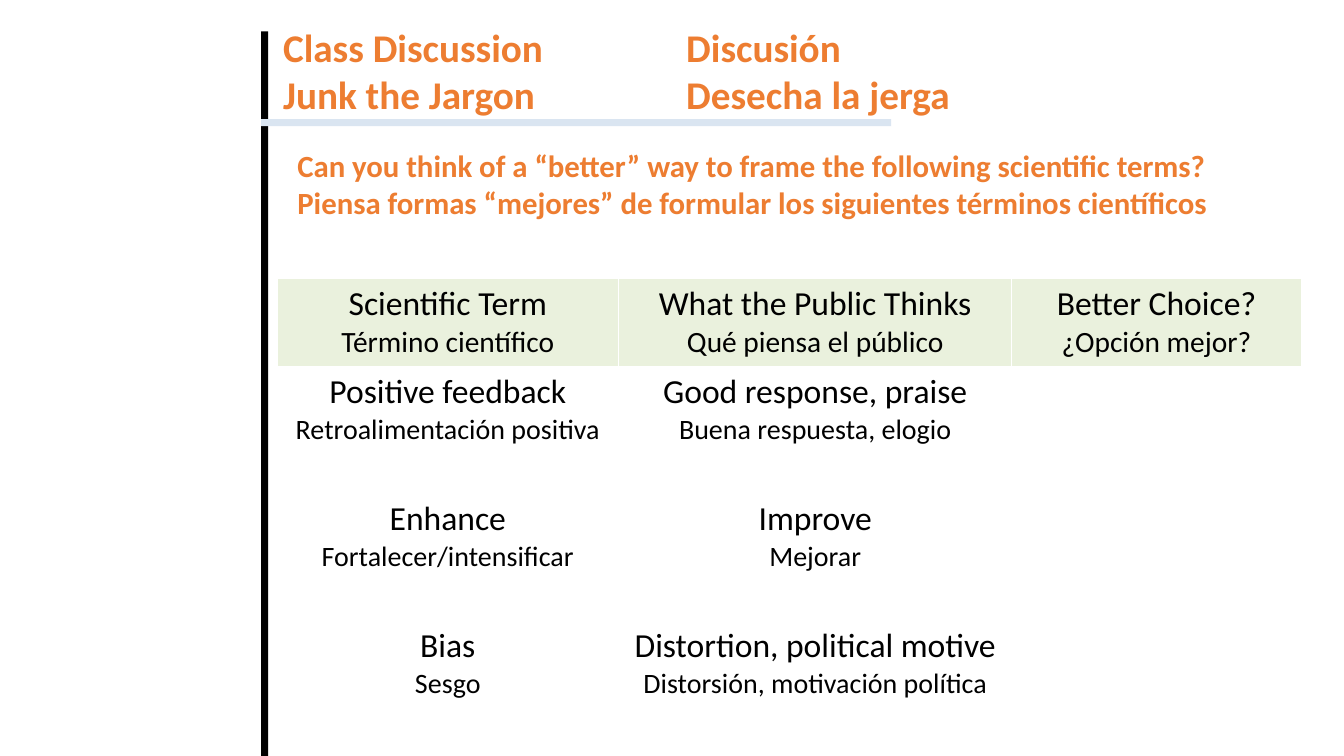
"""Build a bilingual slide on swapping scientific jargon for plain words."""
from dataclasses import dataclass

from lxml.etree import SubElement
from pptx import Presentation
from pptx.dml.color import RGBColor
from pptx.enum.shapes import MSO_SHAPE
from pptx.enum.text import MSO_ANCHOR, MSO_AUTO_SIZE, PP_ALIGN
from pptx.oxml.ns import qn
from pptx.util import Cm, Pt

HUES = {
    "accent": "ED7D31",
    "ink": "000000",
    "header": "EAF1DD",
    "rule": "DAE5F1",
    "border": "FFFFFF",
}
FONT = "Calibri"
TAB = Cm(2.54)


@dataclass
class Box:
    left: float
    top: float
    width: float
    height: float

    def sides(self) -> tuple:
        return Cm(self.left), Cm(self.top), Cm(self.width), Cm(self.height)


@dataclass
class Bar:
    box: Box
    hue: str


@dataclass
class Block:
    box: Box
    size: int
    lines: list


@dataclass
class Pair:
    english: str
    spanish: str


@dataclass
class Row:
    height: float
    small: int
    pairs: list


TITLE = Block(Box(6.88, 0.46, 21.89, 2.64), 28, [
    "Class Discussion\t\tDiscusión",
    "Junk the Jargon\t\tDesecha la jerga",
])
PROMPT = Block(Box(7.24, 3.58, 26.11, 2.64), 22, [
    "Can you think of a “better” way to frame the following scientific terms?",
    "Piensa formas “mejores” de formular los siguientes términos científicos",
])
BARS = [
    Bar(Box(6.58, 0.79, 0.18, 18.26), "ink"),
    Bar(Box(6.58, 3, 15.88, 0.18), "rule"),
]
WIDTHS = [8.61, 9.91, 7.29]
ROWS = [
    Row(2.21, 21, [
        Pair("Scientific Term", "Término científico"),
        Pair("What the Public Thinks", "Qué piensa el público"),
        Pair("Better Choice?", "¿Opción mejor?"),
    ]),
    Row(2.15, 20, [
        Pair("Positive feedback", "Retroalimentación positiva"),
        Pair("Good response, praise", "Buena respuesta, elogio"),
    ]),
    Row(3.2, 20, [
        Pair("Enhance", "Fortalecer/intensificar"),
        Pair("Improve", "Mejorar"),
    ]),
    Row(3.2, 20, [
        Pair("Bias", "Sesgo"),
        Pair("Distortion, political motive", "Distorsión, motivación política"),
    ]),
]


def tint(name: str) -> RGBColor:
    """Return a named colour."""
    return RGBColor.from_string(HUES[name])


def add_line(frame, order: int, text: str, size: int, hue: str, bold: bool):
    """Write one paragraph as a single run."""
    line = frame.paragraphs[0] if order == 0 else frame.add_paragraph()
    run = line.add_run()
    run.text = text
    run.font.name = FONT
    run.font.size = Pt(size)
    run.font.bold = bold
    run.font.color.rgb = tint(hue)
    return line


def fill_block(shape, block: Block) -> None:
    """Place a placeholder and set its plain left-aligned lines."""
    shape.left, shape.top, shape.width, shape.height = block.box.sides()
    frame = shape.text_frame
    frame.word_wrap = True
    frame.auto_size = MSO_AUTO_SIZE.NONE
    frame.vertical_anchor = MSO_ANCHOR.TOP
    for order, text in enumerate(block.lines):
        line = add_line(frame, order, text, block.size, "accent", True)
        line.alignment = PP_ALIGN.LEFT
        line.line_spacing = 1.0
        line.space_before = line.space_after = Pt(0)
        props = line._p.get_or_add_pPr()
        props.set("marL", "0")
        props.set("indent", "0")
        props.set("defTabSz", str(int(TAB)))
        SubElement(props, qn("a:buNone"))


def add_bar(slide, bar: Bar) -> None:
    """Draw a solid bar."""
    shape = slide.shapes.add_shape(MSO_SHAPE.RECTANGLE, *bar.box.sides())
    shape.shadow.inherit = False
    shape.fill.solid()
    shape.fill.fore_color.rgb = tint(bar.hue)
    shape.line.fill.background()


def edge_cell(cell) -> None:
    """Give a cell thin borders on all sides."""
    props = cell._tc.get_or_add_tcPr()
    for side in ("lnL", "lnR", "lnT", "lnB"):
        edge = SubElement(props, qn(f"a:{side}"), w=str(int(Pt(1))))
        solid = SubElement(edge, qn("a:solidFill"))
        SubElement(solid, qn("a:srgbClr"), val=HUES["border"])


def fill_cell(cell, pair: Pair, small: int) -> None:
    """Write an English line over its Spanish match."""
    sizes = ((pair.english, 24), (pair.spanish, small))
    for order, (text, size) in enumerate(sizes):
        line = add_line(cell.text_frame, order, text, size, "ink", False)
        line.alignment = PP_ALIGN.CENTER


def add_terms(slide) -> None:
    """Build the table of terms."""
    box = Box(6.98, 7.02, sum(WIDTHS), sum(row.height for row in ROWS))
    table = slide.shapes.add_table(len(ROWS), len(WIDTHS), *box.sides()).table
    table.first_row = table.horz_banding = False
    for column, width in zip(table.columns, WIDTHS):
        column.width = Cm(width)
    for order, row in enumerate(ROWS):
        table.rows[order].height = Cm(row.height)
        for place in range(len(WIDTHS)):
            cell = table.cell(order, place)
            edge_cell(cell)
            if order == 0:
                cell.fill.solid()
                cell.fill.fore_color.rgb = tint("header")
            else:
                cell.fill.background()
                cell.vertical_anchor = MSO_ANCHOR.BOTTOM
            if place < len(row.pairs):
                fill_cell(cell, row.pairs[place], row.small)


def main() -> None:
    """Build and save the slide."""
    deck = Presentation()
    deck.slide_width, deck.slide_height = Cm(33.87), Cm(19.05)
    slide = deck.slides.add_slide(deck.slide_layouts[1])
    fill_block(slide.shapes.title, TITLE)
    fill_block(slide.placeholders[1], PROMPT)
    add_terms(slide)
    for bar in BARS:
        add_bar(slide, bar)
    deck.save("out.pptx")


if __name__ == "__main__":
    main()
